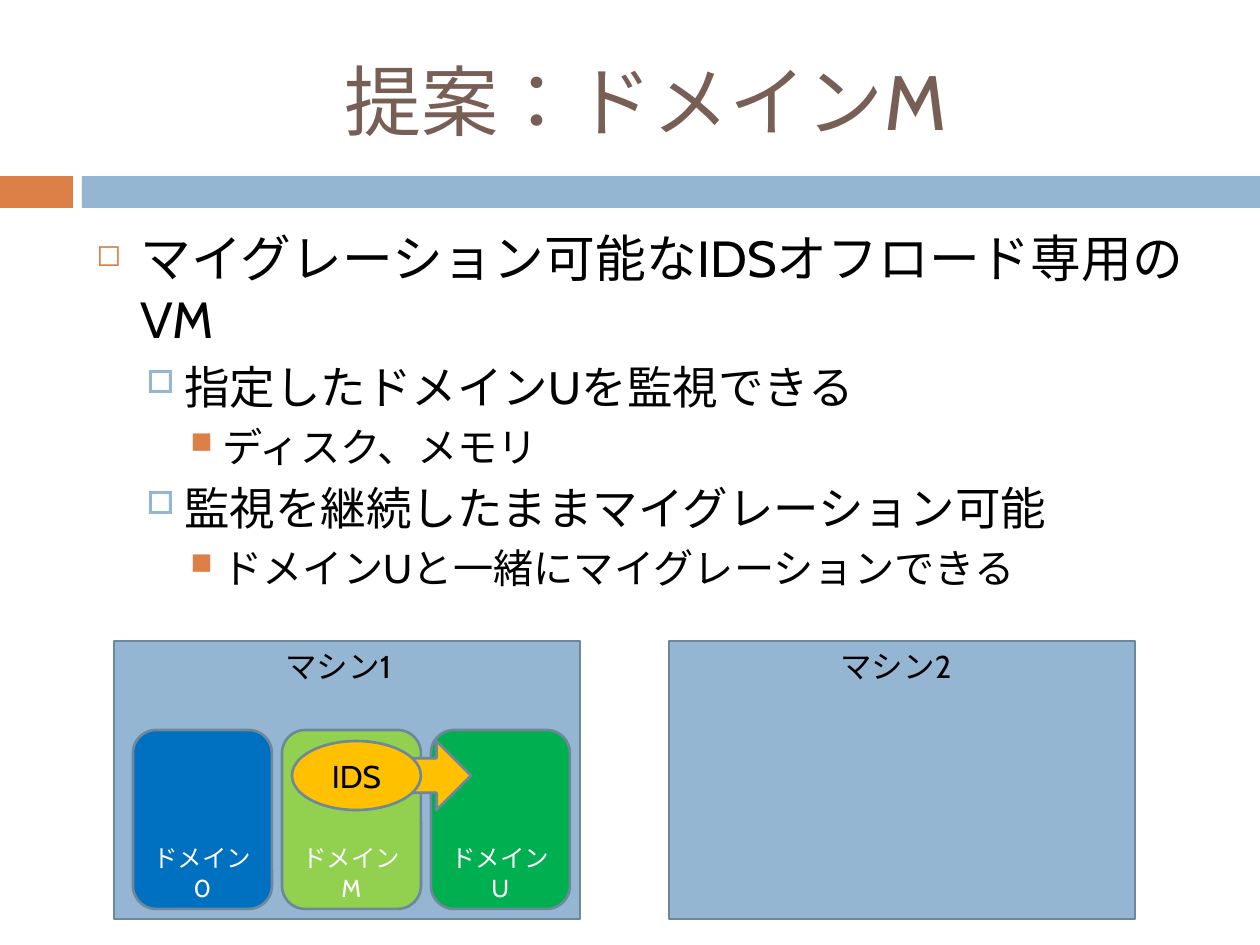
import pptx
import pptx.util
import pptx.dml.color
import pptx.enum.lang
import pptx.enum.shapes
import pptx.enum.text
import pptx.oxml.ns
from dataclasses import dataclass
from lxml import etree

SHAPE = pptx.enum.shapes.MSO_SHAPE
ALIGN = pptx.enum.text.PP_ALIGN
ANCHOR = pptx.enum.text.MSO_ANCHOR


@dataclass(frozen=True)
class Theme:
    font: str = "Cabin"
    title: str = "775F55"
    text: str = "000000"
    light: str = "FFFFFF"
    orange: str = "DD8047"
    blue: str = "94B6D2"
    outline: str = "6D879B"
    ids: str = "FFC000"
    domain_0: str = "0070C0"
    domain_m: str = "92D050"
    domain_u: str = "00B050"
    title_size: int = 44
    label_size: int = 18
    domain_size: int = 14
    line_width: float = 1.5


THEME = Theme()

# Per level: indent px, hanging px, space before pt, size pt, bullet, colour, bullet %
LEVELS = [
    (44, 44, 7, 29, "◻", THEME.orange, 60),
    (88, 38, 5.5, 26, "□", THEME.blue, 70),
    (126, 32, 5, 23, "■", THEME.orange, 75),
]
POINTS = [
    (0, "マイグレーション可能なIDSオフロード専用のVM"),
    (1, "指定したドメインUを監視できる"),
    (2, "ディスク、メモリ"),
    (1, "監視を継続したままマイグレーション可能"),
    (2, "ドメインUと一緒にマイグレーションできる"),
]
DOMAINS = [
    ("ドメイン0", THEME.domain_0),
    ("ドメインM", THEME.domain_m),
    ("ドメインU", THEME.domain_u),
]


def px(n):
    return pptx.util.Emu(round(n * 914400 / 126))


def rgb(value):
    return pptx.dml.color.RGBColor.from_string(value)


def write(p, text, size, color, align=ALIGN.LEFT):
    p.text = text
    p.alignment = align
    p.font.name = THEME.font
    p.font.size = pptx.util.Pt(size)
    p.font.color.rgb = rgb(color)
    p.font.language_id = pptx.enum.lang.MSO_LANGUAGE_ID.JAPANESE


def add_block(s, kind, box, fill, outlined=True):
    sp = s.shapes.add_shape(kind, *map(px, box))
    sp.shadow.inherit = False
    sp.fill.solid()
    sp.fill.fore_color.rgb = rgb(fill)
    if outlined:
        sp.line.color.rgb = rgb(THEME.outline)
        sp.line.width = pptx.util.Pt(THEME.line_width)
    else:
        sp.line.fill.background()
    return sp


def add_text(s, box, anchor=ANCHOR.TOP):
    tf = s.shapes.add_textbox(*map(px, box)).text_frame
    tf.word_wrap = True
    tf.vertical_anchor = anchor
    return tf


def set_bullet(p, indent, hanging, char, color, percent):
    pPr = p._p.get_or_add_pPr()
    pPr.set("marL", str(px(indent)))
    pPr.set("indent", str(-px(hanging)))
    qn = pptx.oxml.ns.qn
    clr = etree.Element(qn("a:buClr"))
    etree.SubElement(clr, qn("a:srgbClr"), val=color)
    size = etree.Element(qn("a:buSzPct"), val=str(percent * 1000))
    bullet = etree.Element(qn("a:buChar"), char=char)
    for element in (clr, size, bullet):
        pPr.find(qn("a:defRPr")).addprevious(element)


def add_band(s, x, y, w, h):
    add_block(s, SHAPE.RECTANGLE, (x, y, 73, h), THEME.orange, outlined=False)
    add_block(s, SHAPE.RECTANGLE, (x + 82, y, w - 82, h), THEME.blue, outlined=False)


def add_title(s, box):
    tf = add_text(s, box, ANCHOR.MIDDLE)
    write(tf.paragraphs[0], "提案：ドメインM", THEME.title_size, THEME.title, ALIGN.CENTER)


def add_points(s, box):
    tf = add_text(s, box)
    for i, (level, text) in enumerate(POINTS):
        p = tf.add_paragraph() if i else tf.paragraphs[0]
        indent, hanging, before, size, char, color, percent = LEVELS[level]
        write(p, text, size, THEME.text)
        p.level = level
        p.space_before = pptx.util.Pt(before)
        set_bullet(p, indent, hanging, char, color, percent)


def add_machine(s, x, y, w, h, name):
    add_block(s, SHAPE.RECTANGLE, (x, y, w, h), THEME.blue)
    tf = add_text(s, (x + 159, y, 146, 50))
    write(tf.paragraphs[0], name, THEME.label_size, THEME.text)


def add_domains(s, x, y):
    for i, (name, color) in enumerate(DOMAINS):
        sp = add_block(s, SHAPE.ROUNDED_RECTANGLE, (x + 19 + 149 * i, y + 89, 139, 179), color)
        tf = sp.text_frame
        tf.vertical_anchor = ANCHOR.BOTTOM
        tf.margin_bottom = 0
        write(tf.paragraphs[0], name, THEME.domain_size, THEME.light, ALIGN.CENTER)

    # IDS in domain M watching domain U
    add_block(s, SHAPE.RIGHT_ARROW, (x + 257, y + 100, 100, 69), THEME.ids)
    ids = add_block(s, SHAPE.OVAL, (x + 178, y + 100, 129, 69), THEME.ids)
    write(ids.text_frame.paragraphs[0], "IDS", THEME.label_size, THEME.text, ALIGN.CENTER)


def main():
    prs = pptx.Presentation()
    prs.slide_width, prs.slide_height = px(1260), px(945)
    s = prs.slides.add_slide(prs.slide_layouts[6])

    # Heading and bullet points
    add_band(s, 0, 176, 1260, 32)
    add_title(s, (84, 32, 1124, 136))
    add_points(s, (84, 221, 1124, 620))

    # Machines
    add_machine(s, 114, 641, 466, 278, "マシン1")
    add_machine(s, 669, 641, 466, 278, "マシン2")
    add_domains(s, 114, 641)

    prs.save("out.pptx")


if __name__ == "__main__":
    main()
